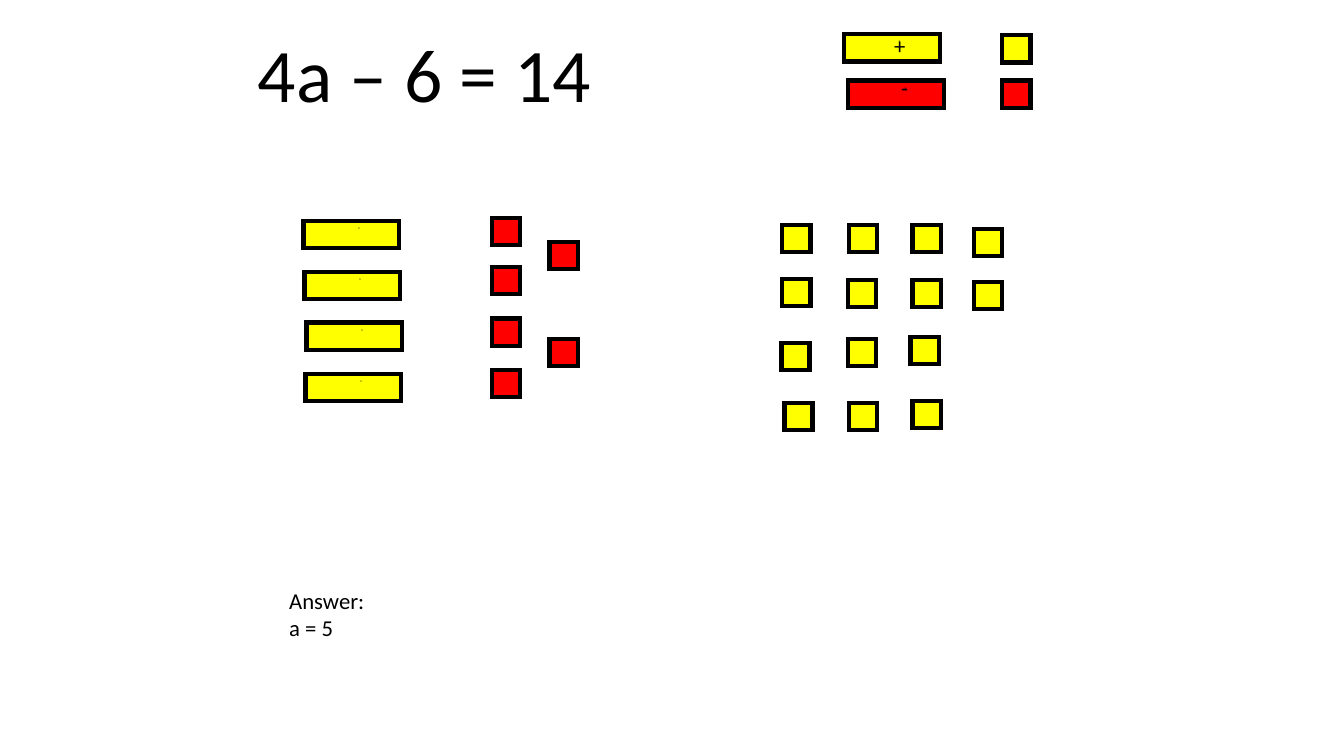
from lxml import etree
from pptx import Presentation
from pptx.dml.color import RGBColor
from pptx.enum.shapes import MSO_SHAPE
from pptx.enum.text import MSO_ANCHOR, MSO_AUTO_SIZE
from pptx.oxml.ns import qn
from pptx.util import Inches, Pt

RECTANGLE = MSO_SHAPE.RECTANGLE
TOP, BOTTOM = MSO_ANCHOR.TOP, MSO_ANCHOR.BOTTOM
GROW, FIXED = MSO_AUTO_SIZE.SHAPE_TO_FIT_TEXT, MSO_AUTO_SIZE.NONE

BLACK = RGBColor(0, 0, 0)
RED = RGBColor(255, 0, 0)
YELLOW = RGBColor(255, 255, 0)

BAR_WIDTH, UNIT_WIDTH, TILE_HEIGHT = 0.95, 0.28, 0.27

X_BARS = [(3.01, 2.19), (3.02, 2.7), (3.04, 3.2), (3.03, 3.71)]
NEGATIVE_UNITS = [(4.88, 2.16), (4.88, 2.65), (4.88, 3.16), (4.88, 3.67),
                  (5.45, 2.4), (5.45, 3.36)]
POSITIVE_UNITS = [
    (7.76, 2.23), (8.42, 2.23), (9.05, 2.23), (9.66, 2.27),
    (7.76, 2.77), (8.41, 2.78), (9.05, 2.78), (9.66, 2.8),
    (7.75, 3.4), (8.41, 3.36), (9.03, 3.34),
    (7.78, 4), (8.42, 4), (9.05, 3.98),
]


def add_text(slide, box, lines, size, font="Calibri", wrap=True,
             anchor=TOP, auto_size=GROW, line_spacing=None):
    tf = slide.shapes.add_textbox(*map(Inches, box)).text_frame
    frame_format = {"word_wrap": wrap, "vertical_anchor": anchor,
                    "auto_size": auto_size}
    for name, value in frame_format.items():
        setattr(tf, name, value)
    for i, line in enumerate(lines):
        p = tf.add_paragraph() if i else tf.paragraphs[0]
        p.line_spacing = line_spacing
        r = p.add_run()
        r.text = line
        for name, value in {"name": font, "size": Pt(size)}.items():
            setattr(r.font, name, value)
        r.font.color.rgb = BLACK


def add_tile(slide, left, top, width, color):
    s = slide.shapes.add_shape(RECTANGLE, Inches(left), Inches(top),
                               Inches(width), Inches(TILE_HEIGHT))
    s.shadow.inherit = False
    s.fill.solid()
    s.fill.fore_color.rgb = color
    s.line.color.rgb = BLACK
    s.line.width = Pt(3)
    ln = s._element.spPr.find(qn("a:ln"))
    etree.SubElement(ln, qn("a:miter"), lim="800000")


def add_x_bar(slide, left, top, color, label_width=0.18):
    """Add a variable tile with its tiny X label."""
    add_tile(slide, left, top, BAR_WIDTH, color)
    add_text(slide, (left + 0.46, top + 0.01, label_width, 0.13), ["X"], 1.8,
             font="Times New Roman")


def add_units(slide, positions, color):
    for left, top in positions:
        add_tile(slide, left, top, UNIT_WIDTH, color)


def add_legend(slide):
    add_x_bar(slide, 8.41, 0.8, RED, label_width=0.28)
    add_x_bar(slide, 8.37, 0.34, YELLOW)
    add_units(slide, [(9.94, 0.8)], RED)
    add_units(slide, [(9.94, 0.35)], YELLOW)
    add_text(slide, (8.77, 0.27, 0.32, 0.37), ["+"], 16.2, wrap=False)
    add_text(slide, (8.84, 0.68, 0.27, 0.37), ["-"], 16.2, wrap=False)


def main():
    prs = Presentation()
    prs.slide_width, prs.slide_height = Inches(13.33), Inches(7.5)
    slide = prs.slides.add_slide(prs.slide_layouts[6])

    add_text(slide, (2.46, 0.29, 8.62, 0.94), ["4a – 6 = 14"], 54,
             anchor=BOTTOM, auto_size=FIXED, line_spacing=0.9)
    add_legend(slide)
    for left, top in X_BARS:
        add_x_bar(slide, left, top, YELLOW)
    add_units(slide, POSITIVE_UNITS, YELLOW)
    add_units(slide, NEGATIVE_UNITS, RED)
    add_text(slide, (2.77, 5.77, 1.83, 0.65), ["Answer:", "a = 5"], 16.2)

    prs.save("out.pptx")


if __name__ == "__main__":
    main()
